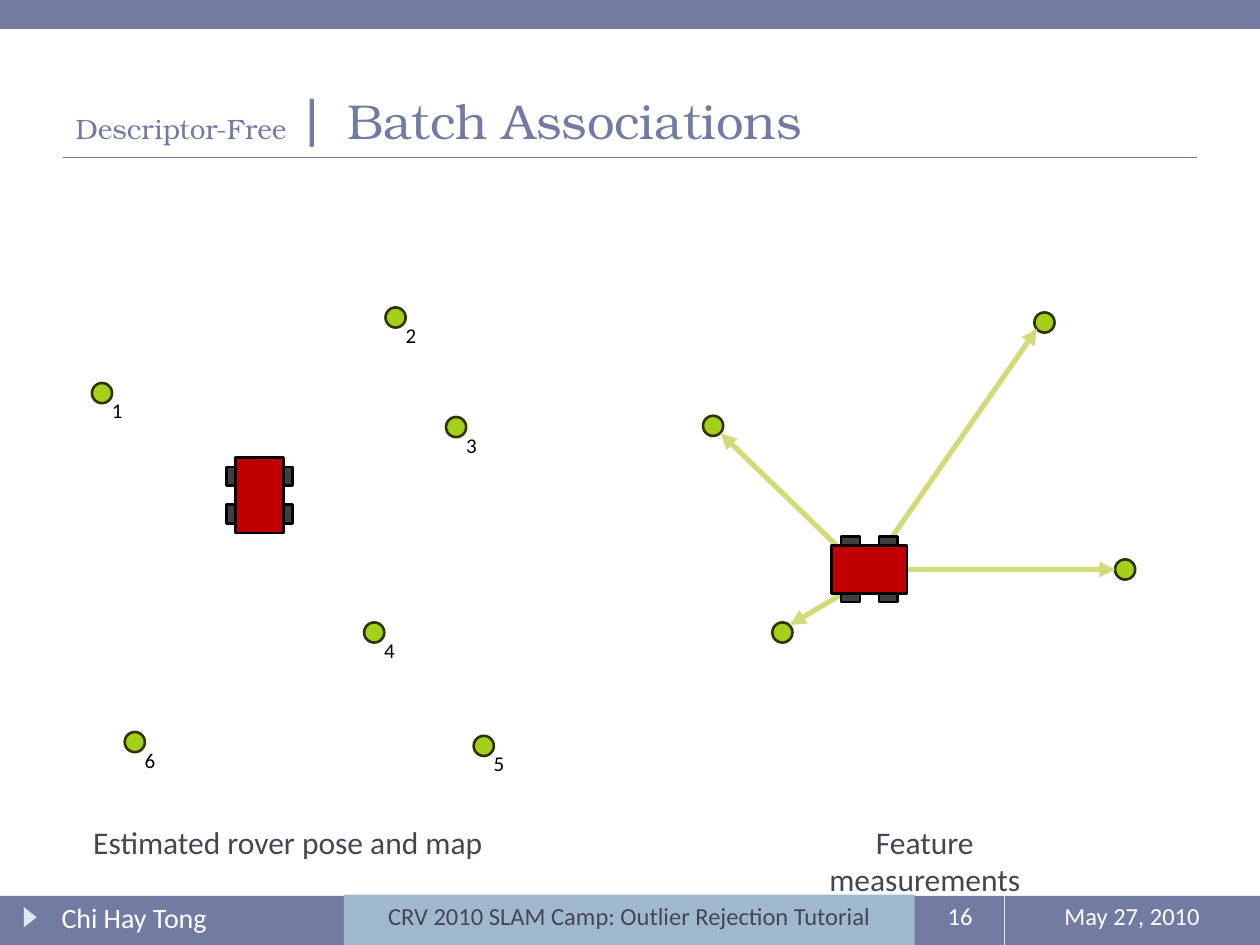
from lxml.etree import SubElement
from pptx import Presentation
from pptx.dml.color import RGBColor
from pptx.enum.shapes import MSO_CONNECTOR, MSO_SHAPE
from pptx.enum.text import MSO_ANCHOR, MSO_AUTO_SIZE, PP_ALIGN
from pptx.oxml.ns import qn
from pptx.util import Inches, Pt

COLUMNS, ROWS = 100, 75
CENTER, LEFT = PP_ALIGN.CENTER, PP_ALIGN.LEFT


def color(code):
    return RGBColor.from_string(code)


def write(paragraph, text, size=14, font="Calibri", ink="464653", align=None):
    span = paragraph.add_run()
    span.text = text
    span.font.size = Pt(size)
    span.font.name = font
    span.font.color.rgb = color(ink)
    if align is not None:
        paragraph.alignment = align


class Slide:
    slate = "727CA3"
    pale = "DDE9EC"
    sky = "9FB8CD"
    ray = "D2DA7A"
    heading = "TeX Gyre Bonum"

    def __init__(self, deck):
        self.page = deck.slides.add_slide(deck.slide_layouts[5])
        self.column = deck.slide_width / COLUMNS
        self.row = deck.slide_height / ROWS

    def place(self, left, top, width, height):
        return (round(left * self.column), round(top * self.row),
                round(width * self.column), round(height * self.row))

    def title(self, spans):
        box = self.page.shapes.title
        box.left, box.top, box.width, box.height = self.place(5, 1.7, 90, 10.8)
        frame = box.text_frame
        frame.auto_size = MSO_AUTO_SIZE.NONE
        frame.word_wrap = True
        frame.vertical_anchor = MSO_ANCHOR.BOTTOM
        for text, size in spans:
            write(frame.paragraphs[0], text, size=size, font=self.heading,
                  ink=self.slate, align=LEFT)

    def shape(self, kind, area, fill, line=None, rotation=0, opacity=None, parent=None):
        shape = (parent or self.page).shapes.add_shape(kind, *self.place(*area))
        shape.shadow.inherit = False
        shape.rotation = rotation
        shape.fill.solid()
        shape.fill.fore_color.rgb = color(fill)
        if opacity:
            tint = shape.fill._xPr.find(qn("a:solidFill"))[0]
            SubElement(tint, qn("a:alpha")).set("val", str(opacity * 1000))
        if line:
            shape.line.color.rgb = color(line)
            shape.line.width = Pt(1.5)
        else:
            shape.line.fill.background()
        return shape

    def text(self, text, area, wrap=True, parent=None, **style):
        box = (parent or self.page).shapes.add_textbox(*self.place(*area))
        box.text_frame.word_wrap = wrap
        write(box.text_frame.paragraphs[0], text, **style)

    def line(self, start, end, ink, width=0.75, arrow=False):
        line = self.page.shapes.add_connector(
            MSO_CONNECTOR.STRAIGHT, *self.place(*start, *end))
        line.line.color.rgb = color(ink)
        line.line.width = Pt(width)
        if arrow:
            SubElement(line.line._get_or_add_ln(), qn("a:tailEnd")).set("type", "triangle")
        SubElement(line._element.spPr, qn("a:effectLst"))

    def landmark(self, x, y, label=None):
        group = self.page.shapes.add_group_shape() if label else None
        self.shape(MSO_SHAPE.OVAL, (x - 0.8, y - 0.8, 1.6, 1.6), "99CC00",
                   line="333300", opacity=90, parent=group)
        if label:
            self.text(label, (x - 0.2, y - 0.1, 2.9, 3), wrap=False, parent=group,
                      size=12, ink="000000")

    def rover(self, x, y, rotation=0):
        group = self.page.shapes.add_group_shape()

        def part(along, across, width, height, fill):
            across_x, along_y = (across, along) if rotation else (along, across)
            area = (x + across_x - width / 2, y + along_y - height / 2, width, height)
            self.shape(MSO_SHAPE.RECTANGLE, area, fill, line="000000",
                       rotation=rotation, parent=group)

        part(0, 0, 6, 3.8, "C00000")
        for along in (-1.5, 1.5):
            for across in (-2.25, 2.25):
                part(along, across, 1.5, 0.7, "404040")

    def footer(self):
        self.shape(MSO_SHAPE.RECTANGLE, (0, 71.1, COLUMNS, 3.9), self.slate)
        self.shape(MSO_SHAPE.ISOSCELES_TRIANGLE, (1.6, 72.3, 1.6, 1), self.pale, rotation=90)
        self.line((79.7, 71.1), (79.7, ROWS), self.pale)
        self.text("16", (72.7, 71, 7, 4), ink="FFFFFF", align=CENTER)
        self.text("May 27, 2010", (79.7, 71, 20.3, 4), ink="FFFFFF", align=CENTER)
        self.text("Chi Hay Tong", (3.9, 71, 21.7, 4), size=16, ink="FFFFFF")
        event = self.shape(MSO_SHAPE.RECTANGLE, (27.3, 71, 45.3, 4), self.sky)
        event.text_frame.vertical_anchor = MSO_ANCHOR.TOP
        write(event.text_frame.paragraphs[0],
              "CRV 2010 SLAM Camp: Outlier Rejection Tutorial", align=CENTER)


def main():
    deck = Presentation()
    deck.slide_width, deck.slide_height = Inches(10), Inches(7.5)
    slide = Slide(deck)

    slide.shape(MSO_SHAPE.RECTANGLE, (0, 0, COLUMNS, 2.3), slide.slate)
    slide.line((5, 12.5), (95, 12.5), slide.slate)
    slide.title([("Descriptor-Free ", 16), ("| ", 32), ("Batch Associations", 28)])
    slide.footer()

    slide.text("Estimated rover pose and map", (6.3, 64.8, 33.1, 4), wrap=False,
               size=18, align=CENTER)
    slide.text("Feature measurements", (60.9, 64.8, 25, 4), size=18, align=CENTER)

    slide.rover(20.6, 39.3, rotation=270)
    map_points = [(8.1, 31.2), (31.4, 25.2), (36.2, 33.9),
                  (29.7, 50.2), (38.4, 59.2), (10.7, 58.9)]
    for number, (x, y) in enumerate(map_points, 1):
        slide.landmark(x, y, label=str(number))

    measurements = [
        ((89.3, 45.2), (69, 45.2), (88.5, 45.2)),
        ((62.1, 50.2), (69.6, 45.5), (62.7, 49.6)),
        ((56.6, 33.8), (69, 45.8), (57.2, 34.4)),
        ((82.9, 25.6), (69, 45.2), (82.3, 26.1)),
    ]
    for feature, start, tip in measurements:
        slide.landmark(*feature)
        slide.line(start, tip, slide.ray, width=3, arrow=True)
    slide.rover(69, 45.2)

    deck.save("out.pptx")


if __name__ == "__main__":
    main()
